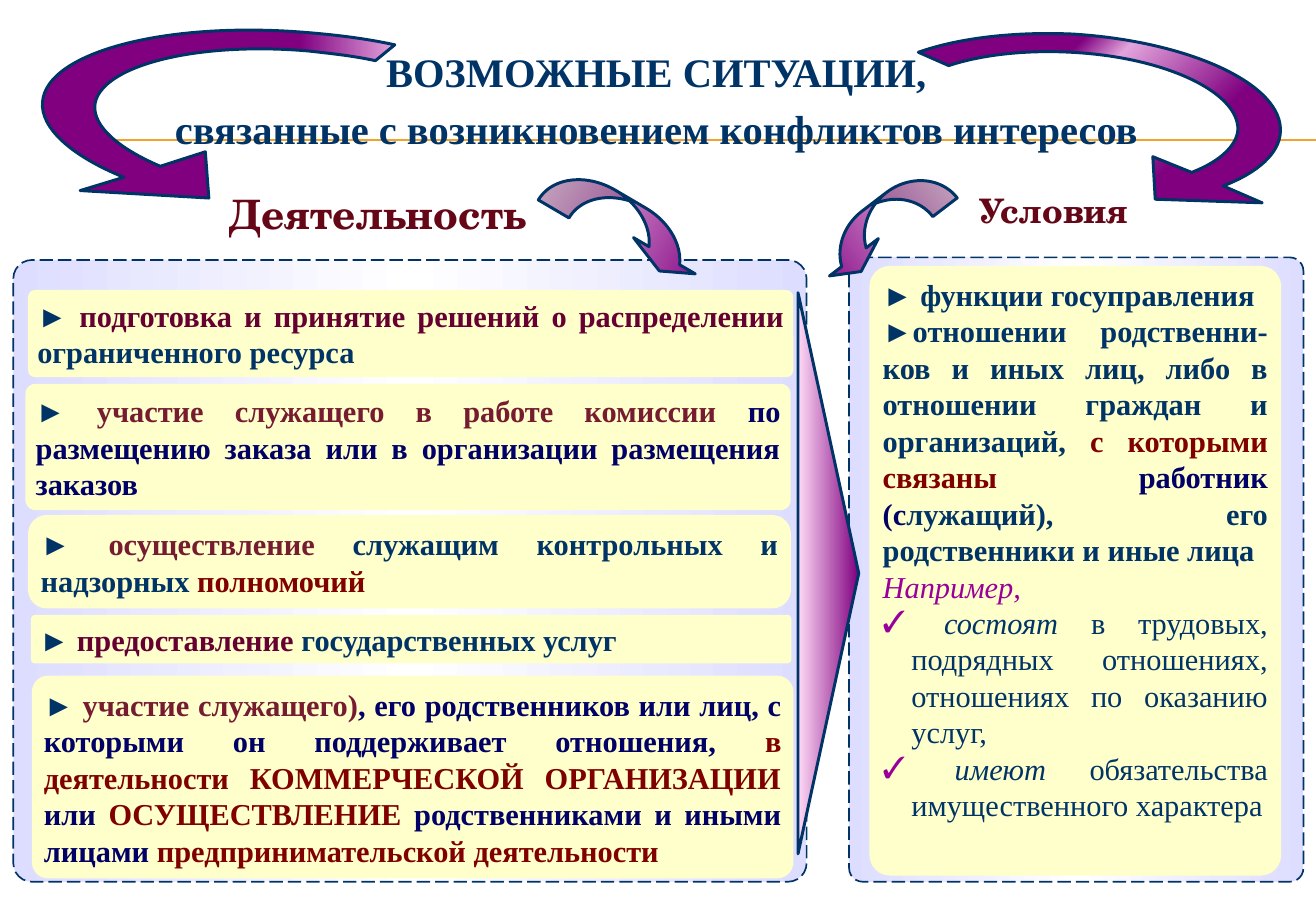
from dataclasses import dataclass

from lxml import etree
from pptx import Presentation
from pptx.dml.color import RGBColor
from pptx.enum.dml import MSO_LINE
from pptx.enum.shapes import MSO_CONNECTOR, MSO_SHAPE
from pptx.enum.text import MSO_ANCHOR, MSO_AUTO_SIZE, PP_ALIGN
from pptx.oxml.ns import qn
from pptx.util import Pt

ROUNDED = MSO_SHAPE.ROUNDED_RECTANGLE
CURVED_ARROW = MSO_SHAPE.CURVED_DOWN_ARROW
TRIANGLE = MSO_SHAPE.FLOWCHART_EXTRACT
STRAIGHT = MSO_CONNECTOR.STRAIGHT
LONG_DASH = MSO_LINE.LONG_DASH
TOP, MIDDLE = MSO_ANCHOR.TOP, MSO_ANCHOR.MIDDLE
CENTER, JUSTIFY = PP_ALIGN.CENTER, PP_ALIGN.JUSTIFY
NO_AUTOFIT = MSO_AUTO_SIZE.NONE


@dataclass(frozen=True)
class Theme:
    navy: str = "003366"
    indigo: str = "000066"
    wine: str = "761C31"
    plum: str = "660033"
    maroon: str = "800000"
    heading: str = "650717"
    violet: str = "990099"
    purple: str = "800080"
    pink: str = "FEDAF6"
    orchid: str = "E2A4DC"
    lavender: str = "DDDDFF"
    white: str = "FFFFFF"
    cream: str = "FFFFCC"
    orange: str = "F0A22E"
    serif: str = "Times New Roman"
    school: str = "TeX Gyre Schola"
    title_size: float = 24
    small_heading_size: float = 20
    body_size: float = 18


class SlideBuilder:
    """Draws styled elements on the current slide."""

    def __init__(self, slide, theme):
        self.slide, self.theme, self.shapes = slide, theme, slide.shapes

    def set_font(self, font, size, color, face=None, bold=True):
        font.name, font.size, font.bold = face or self.theme.serif, Pt(size), bold
        font.color.rgb = RGBColor.from_string(color)

    def rule(self, x1, x2, y):
        line = self.shapes.add_connector(STRAIGHT, Pt(x1), Pt(y), Pt(x2), Pt(y))
        line.line.color.rgb = RGBColor.from_string(self.theme.orange)
        line.line.width = Pt(0.75)
        etree.SubElement(line._element.spPr, qn("a:effectLst"))

    def gradient(self, shape, stops, angle=0):
        shape.fill.gradient()
        shape.fill.gradient_angle = (360 - angle) % 360
        stop_list = shape._element.spPr.find(qn("a:gradFill")).find(qn("a:gsLst"))
        for stop in list(stop_list):
            stop_list.remove(stop)
        for position, color in stops:
            stop = etree.SubElement(stop_list, qn("a:gs"), pos=str(position * 1000))
            etree.SubElement(stop, qn("a:srgbClr"), val=color)

    def outline(self, shape, width):
        shape.shadow.inherit = False
        shape.line.color.rgb = RGBColor.from_string(self.theme.navy)
        shape.line.width = Pt(width)

    def preset(self, kind, box, adjustments=()):
        shape = self.shapes.add_shape(kind, *map(Pt, box))
        for index, value in enumerate(adjustments):
            shape.adjustments[index] = value
        return shape

    def panel(self, box):
        t = self.theme
        panel = self.preset(ROUNDED, box, [0.03])
        self.gradient(panel, [(0, t.lavender), (50, t.white), (100, t.lavender)])
        self.outline(panel, 1)
        panel.line.dash_style = LONG_DASH

    def pointer(self, kind, box, stops, rotation, angle=0, adjustments=(), flip=False):
        pointer = self.preset(kind, box, adjustments)
        pointer.rotation = rotation
        self.gradient(pointer, stops, angle)
        self.outline(pointer, 1.75)
        if flip:
            pointer._element.spPr.find(qn("a:xfrm")).set("flipH", "1")

    def swoosh(self, start, steps, stops, angle=0):
        points = [(Pt(x), Pt(y)) for step in steps for x, y in zip(step[::2], step[1::2])]
        outline = self.shapes.build_freeform(*map(Pt, start))
        outline.add_line_segments(points, close=True)
        arrow = outline.convert_to_shape()
        segments = iter(list(arrow._element.spPr.iter(qn("a:lnTo"))))
        for step in steps:
            first = next(segments)
            if len(step) == 6:
                first.tag = qn("a:cubicBezTo")
                for _ in range(2):
                    control = next(segments)
                    first.append(control[0])
                    control.getparent().remove(control)
        self.gradient(arrow, stops, angle)
        self.outline(arrow, 1.75)

    def title(self, box, lines):
        title = self.shapes.title
        title.left, title.top, title.width, title.height = map(Pt, box)
        frame = title.text_frame
        frame.word_wrap, frame.auto_size, frame.vertical_anchor = True, NO_AUTOFIT, TOP
        frame.text = "\n".join(lines)
        for index, paragraph in enumerate(frame.paragraphs):
            paragraph.alignment = CENTER
            paragraph.space_before = Pt(4.8 if index else 0)
            self.set_font(paragraph.font, self.theme.title_size, self.theme.navy)
        self.shapes._spTree.append(title._element)

    def heading(self, box, text, size):
        frame = self.shapes.add_textbox(*map(Pt, box)).text_frame
        frame.word_wrap = False
        paragraph = frame.paragraphs[0]
        paragraph.text, paragraph.alignment = text, CENTER
        self.set_font(paragraph.font, size, self.theme.heading, self.theme.school)

    def card(self, box, corner, paragraphs, anchor=MIDDLE):
        card = self.preset(ROUNDED, box, [corner])
        card.shadow.inherit = False
        card.fill.solid()
        card.fill.fore_color.rgb = RGBColor.from_string(self.theme.cream)
        card.line.fill.background()
        frame = card.text_frame
        frame.word_wrap, frame.vertical_anchor = True, anchor
        frame.margin_left = frame.margin_right = Pt(4.3)
        frame.margin_top = frame.margin_bottom = Pt(2.5)
        for index, (bold, bullet, runs) in enumerate(paragraphs):
            paragraph = frame.add_paragraph() if index else frame.paragraphs[0]
            paragraph.alignment = JUSTIFY
            if bullet:
                self.bullet(paragraph, bullet)
            self.set_font(paragraph.font, self.theme.body_size, self.theme.navy, bold=bold)
            for text, color, *italic in runs:
                run = paragraph.add_run()
                run.text = text
                run.font.color.rgb = RGBColor.from_string(color)
                if italic:
                    run.font.italic = True

    def bullet(self, paragraph, mark):
        properties = paragraph._p.get_or_add_pPr()
        properties.set("marL", str(Pt(17)))
        properties.set("indent", str(-Pt(17)))
        color = etree.SubElement(properties, qn("a:buClr"))
        etree.SubElement(color, qn("a:srgbClr"), val=self.theme.violet)
        etree.SubElement(properties, qn("a:buFont"), typeface=self.theme.serif)
        etree.SubElement(properties, qn("a:buChar"), char=mark)


def main():
    t = Theme()
    deck = Presentation()
    deck.slide_width, deck.slide_height = Pt(780), Pt(540)
    page = SlideBuilder(deck.slides.add_slide(deck.slide_layouts[5]), t)

    for y in (82.8, 83.3):
        page.rule(44, 780, y)
    page.panel((503.3, 152.6, 269.3, 370.1))
    page.panel((7.9, 154.1, 470.2, 368.6))
    page.title((89, 24.5, 600, 72),
               ["ВОЗМОЖНЫЕ СИТУАЦИИ,", "связанные с возникновением конфликтов интересов"])
    page.heading((124, 108.7, 200, 29), "Деятельность", t.title_size)
    page.heading((564.6, 108.7, 120, 27), "Условия", t.small_heading_size)

    activities = [
        ((16.6, 171.8, 453.6, 51.8), 0.08, [
            ("подготовка и принятие решений о распределении ", t.plum),
            ("ограниченного ресурса", t.navy)]),
        ((15.1, 227.5, 453.6, 74.9), 0.08, [
            ("участие служащего в работе комиссии", t.wine),
            (" по размещению заказа или в организации размещения заказов", t.indigo)]),
        ((16.6, 305.3, 452.2, 55.4), 0.2, [
            ("осуществление ", t.wine), ("служащим контрольных и надзорных ", t.navy),
            ("полномочий", t.maroon)]),
        ((18.4, 364.5, 450.7, 28.8), 0.08, [
            ("предоставление", t.plum), (" государственных услуг", t.navy)]),
        ((18.9, 400.5, 451.4, 120.2), 0.08, [
            ("участие служащего)", t.wine),
            (", его родственников или лиц, с которыми он поддерживает отношения, ", t.indigo),
            ("в деятельности КОММЕРЧЕСКОЙ ОРГАНИЗАЦИИ", t.maroon), (" или ", t.indigo),
            ("ОСУЩЕСТВЛЕНИЕ", t.maroon), (" родственниками и иными лицами ", t.indigo),
            ("предпринимательской деятельности", t.maroon)]),
    ]
    for box, corner, runs in activities:
        page.card(box, corner, [(True, None, [("► ", t.navy), *runs])])

    conditions = [
        (True, None, [("► функции госуправления", t.navy)]),
        (True, None, [
            ("►отношении родственни-ков и иных лиц, либо в отношении граждан и организаций, ",
             t.navy),
            ("с которыми связаны", t.maroon), (" работник (с", t.indigo),
            ("лужащий), его родственники и иные лица", t.navy)]),
        (False, None, [("Например,", t.violet, True)]),
        (False, "✓", [
            (" состоят ", t.navy, True),
            ("в трудовых, подрядных отношениях, отношениях по оказанию услуг,", t.navy)]),
        (False, "✓", [(" имеют ", t.navy, True),
                      ("обязательства имущественного характера", t.navy)]),
    ]
    page.card((515.3, 157.6, 244.1, 361.4), 0.05, conditions, TOP)

    page.swoosh((95, 98.6), [
        (69.8, 87.8, 55.4, 74.9, 56.2, 62.6), (58.3, 39.6, 114.5, 24.5, 182.2, 30.2),
        (195.8, 31.7, 209.5, 33.1, 222.5, 36), (234, 26.6),
        (217.4, 23, 200.9, 20.9, 182.9, 19.4), (98.6, 12.2, 27.4, 31, 25.2, 60.5),
        (23.8, 75.6, 41.8, 92.2, 73.4, 105.1), (47.5, 113), (123.8, 117.4), (121.7, 90),
    ], [(0, t.purple), (73, t.purple), (100, t.orchid)])
    page.swoosh((706.3, 102.2), [
        (722.9, 95.8, 733, 86.4, 733.7, 77), (734.4, 54.7, 690.5, 33.8, 635, 31),
        (608.4, 29.5, 581.8, 32.4, 562.3, 38.9), (544.3, 31),
        (568.8, 22.3, 601.9, 18.7, 635.8, 20.2), (705.6, 24.5, 761, 50.4, 758.9, 78.5),
        (758.2, 90.7, 745.9, 102.2, 725, 110.2), (748.1, 120.2), (684.7, 118.1),
        (683.3, 92.9),
    ], [(0, t.purple), (32, t.purple), (42, t.orchid), (72, t.purple), (100, t.purple)], 45)

    fade_in = [(0, t.pink), (100, t.purple)]
    page.pointer(CURVED_ARROW, (319, 118.8, 104.4, 28.1), fade_in, 30.4,
                 adjustments=(0.75, 1.51, 0.33))
    page.pointer(CURVED_ARROW, (478.1, 119.5, 90, 28.1), fade_in, 322.6,
                 adjustments=(0.65, 1.3, 0.33), flip=True)
    page.pointer(TRIANGLE, (324.7, 321.8, 332.6, 36), [(0, t.purple), (100, t.pink)], 90, 90)
    deck.save("out.pptx")


if __name__ == "__main__":
    main()
